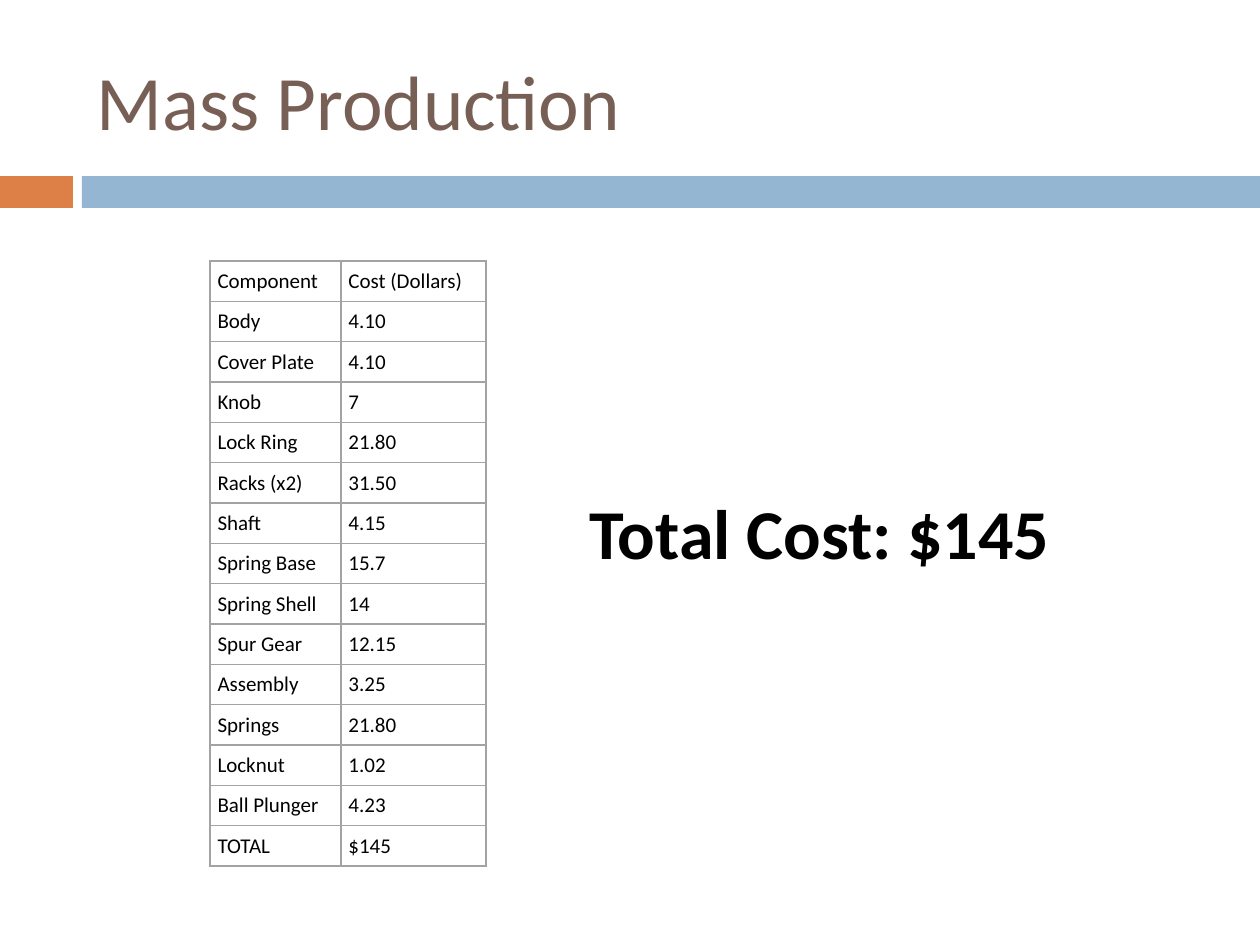
from lxml import etree
from pptx import Presentation
from pptx import util as u
from pptx.dml.color import RGBColor
from pptx.enum import shapes, text
from pptx.oxml.ns import qn

PX = 7257  # EMU per px at 126 px to the inch
FONT = "Calibri"
ORANGE = RGBColor(0xDD, 0x80, 0x47)
BLUE = RGBColor(0x94, 0xB6, 0xD2)
BROWN = RGBColor(0x77, 0x5F, 0x55)
BLACK = RGBColor(0, 0, 0)
GRAY = RGBColor(0xA3, 0xA3, 0xA3)

COSTS = [
    ("Component", "Cost (Dollars)"),
    ("Body", "4.10"),
    ("Cover Plate", "4.10"),
    ("Knob", "7"),
    ("Lock Ring", "21.80"),
    ("Racks (x2)", "31.50"),
    ("Shaft", "4.15"),
    ("Spring Base", "15.7"),
    ("Spring Shell", "14"),
    ("Spur Gear", "12.15"),
    ("Assembly", "3.25"),
    ("Springs", "21.80"),
    ("Locknut", "1.02"),
    ("Ball Plunger", "4.23"),
    ("TOTAL", "$145"),
]


def px(*lengths):
    return [u.Emu(n * PX) for n in lengths]


def format_text(tf, size, color, bold=False):
    for p in tf.paragraphs:
        for r in p.runs:
            r.font.name = FONT
            r.font.size = u.Pt(size)
            r.font.bold = bold
            r.font.color.rgb = color


def add_bar(s, box, color):
    sp = s.shapes.add_shape(shapes.MSO_SHAPE.RECTANGLE, *px(*box))
    sp.shadow.inherit = False
    sp.fill.solid()
    sp.fill.fore_color.rgb = color
    sp.line.fill.background()


def add_text(s, box, words, size, color, bold=False, wrap=True,
             anchor=text.MSO_ANCHOR.TOP):
    tf = s.shapes.add_textbox(*px(*box)).text_frame
    tf.word_wrap = wrap
    tf.vertical_anchor = anchor
    tf.text = words
    format_text(tf, size, color, bold)


def set_borders(cell, color, width):
    tc_pr = cell._tc.get_or_add_tcPr()
    for i, side in enumerate(("lnL", "lnR", "lnT", "lnB")):
        ln = etree.Element(qn(f"a:{side}"), w=str(u.Pt(width)))
        fill = etree.SubElement(ln, qn("a:solidFill"))
        etree.SubElement(fill, qn("a:srgbClr"), val=str(color))
        tc_pr.insert(i, ln)


def add_cost_table(s, left, top, widths, row_height):
    frame = s.shapes.add_table(
        len(COSTS), len(widths),
        *px(left, top, sum(widths), row_height * len(COSTS)))
    table = frame.table
    table.first_row = table.horz_banding = False
    for column, width in zip(table.columns, px(*widths)):
        column.width = width
    for row, values in zip(table.rows, COSTS):
        for cell, value in zip(row.cells, values):
            cell.margin_left = cell.margin_right = u.Inches(0.06)
            cell.margin_top = cell.margin_bottom = u.Inches(0.06)
            cell.fill.background()
            cell.text_frame.text = value
            format_text(cell.text_frame, 12, BLACK)
            set_borders(cell, GRAY, 1)


def main():
    prs = Presentation()
    prs.slide_width, prs.slide_height = u.Inches(10), u.Inches(7.5)
    s = prs.slides.add_slide(prs.slide_layouts[6])

    # Header band and title
    add_bar(s, (0, 176, 73, 32), ORANGE)
    add_bar(s, (82, 176, 1178, 32), BLUE)
    add_text(s, (84, 32, 1124, 136), "Mass Production", 44, BROWN,
             anchor=text.MSO_ANCHOR.MIDDLE)

    # Component costs and their total
    add_cost_table(s, 210, 261, (131, 145), 39)
    add_text(s, (577, 483, 499, 97), "Total Cost: $145", 40, BLACK,
             bold=True, wrap=False)

    prs.save("out.pptx")


if __name__ == "__main__":
    main()
